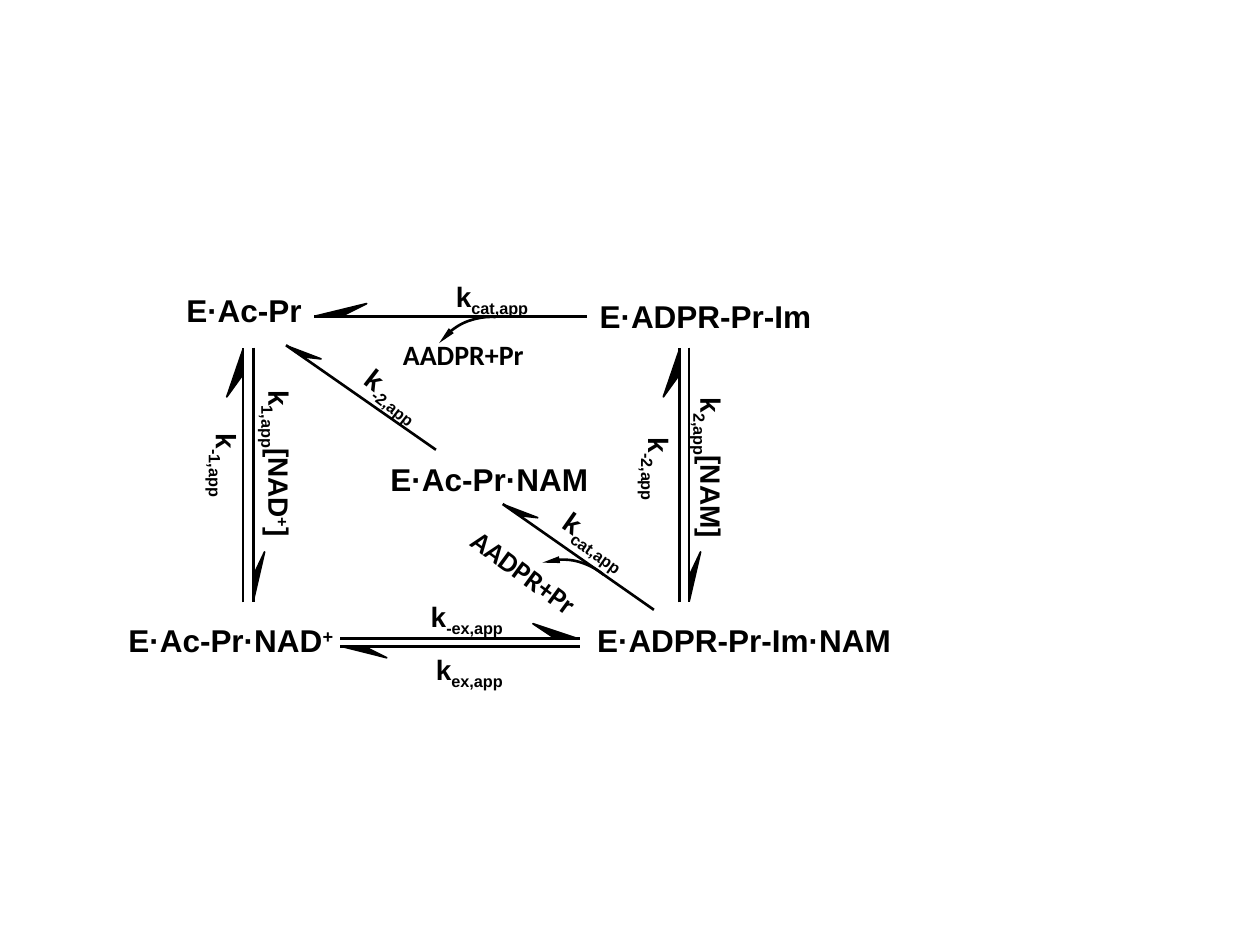
from math import hypot

from pptx import Presentation
from pptx.dml.color import RGBColor
from pptx.enum.shapes import MSO_CONNECTOR, MSO_SHAPE
from pptx.enum.text import MSO_AUTO_SIZE
from pptx.oxml.ns import qn
from pptx.util import Inches, Pt
from lxml.etree import SubElement

COLORS = {"ink": "000000"}
INK = RGBColor.from_string(COLORS["ink"])

deck = Presentation()
deck.slide_width, deck.slide_height = Inches(10), Inches(7.5)
slide = deck.slides.add_slide(deck.slide_layouts[6])
shapes = slide.shapes
CELL = deck.slide_width / 100  # grid of 100 columns by 75 rows


def grid(*cells):
    return [round(c * CELL) for c in cells]


def label(text, left, top, wide, size=16, font="Arial", turn=0):
    """Bold text; "|" parts runs, "_" lowers a run and "^" raises it."""
    high = 4 if size > 16 else 3.7
    box = shapes.add_textbox(*grid(left, top, wide, high))
    box.rotation = turn
    frame = box.text_frame
    frame.word_wrap = False
    frame.auto_size = MSO_AUTO_SIZE.SHAPE_TO_FIT_TEXT
    for part in text.split("|"):
        shift = {"_": "-25000", "^": "30000"}.get(part[0])
        run = frame.paragraphs[0].add_run()
        run.text = part[1:] if shift else part
        run.font.size, run.font.name, run.font.bold = Pt(size), font, True
        run.font.color.rgb = INK
        if shift:
            run.font._element.set("baseline", shift)
    return box


def arrow(start, end, near, far, off):
    """Line with a half head: near and far run back from the tip, off is sideways."""
    line = shapes.add_connector(MSO_CONNECTOR.STRAIGHT, *grid(*start, *end))
    line.line.color.rgb, line.line.width = INK, Pt(1.5)
    SubElement(line._element.spPr, qn("a:effectLst"))
    dx, dy = start[0] - end[0], start[1] - end[1]
    span = hypot(dx, dy)
    ux, uy = dx / span, dy / span
    tip = end[0] + 0.1 * ux, end[1] + 0.1 * uy
    inner = tip[0] + near * ux, tip[1] + near * uy
    outer = tip[0] + far * ux + off * uy, tip[1] + far * uy - off * ux
    path = shapes.build_freeform(*grid(*tip), scale=1.0)
    path.add_line_segments([grid(*inner), grid(*outer)], close=True)
    head = path.convert_to_shape()
    head.shadow.inherit = False
    head.fill.solid()
    head.fill.fore_color.rgb = INK
    head.line.color.rgb, head.line.width = INK, Pt(1)
    return line


def release(left, top, turn, text_at, tilt=0):
    """Curved arrow with the product that leaves."""
    arc = shapes.add_shape(MSO_SHAPE.ARC, *grid(left, top, 10.3, 10.4))
    arc.shadow.inherit = False
    arc.rotation = turn
    for i, angle in enumerate((290.35, 347.44)):
        arc.adjustments[i] = angle * 0.6  # degrees to shape units
    arc.fill.background()
    arc.line.color.rgb, arc.line.width = INK, Pt(1.5)
    end = SubElement(arc.line._get_or_add_ln(), qn("a:headEnd"))
    for key, value in (("type", "triangle"), ("w", "sm"), ("len", "lg")):
        end.set(key, value)
    label("AADPR+Pr", *text_at, 11.7, font="Calibri", turn=tilt)


def upright(left, top, wide, high, down, up):
    """Vertical equilibrium; each label is text, offset from the box, width."""
    right, foot = left + wide, top + high
    arrow((right, top), (right, foot), 2, 3.9, -0.9)
    arrow((left, foot), (left, top), 2, 3.8, -1.3)
    for text, dx, dy, size in (down, up):
        label(text, left + dx, top + dy, size, turn=90)


def level(left, top, wide, high):
    """Horizontal equilibrium with its two rate constants."""
    right, foot = left + wide, top + high
    arrow((right, foot), (left, foot), 1.8, 3.6, -0.9)
    arrow((left, top), (right, top), 1.8, 3.6, -1.2)
    label("k|_-ex,app", left + 6.2, top - 3.6, 8.5)
    label(" k|_ex,app", left + 6, foot, 9)


def slope(left, top, wide, high, text, dx, dy, size, turn):
    """Diagonal step from bottom right to top left."""
    arrow((left + wide, top + high), (left, top), 1.5, 2.8, 0.7)
    label(text, left + dx, top + dy, size, turn=turn)


def turnover(left, top, wide, source):
    """Top catalytic step, joined to its source species."""
    line = arrow((left + wide, top), (left, top), 2.1, 4.1, 1)
    line.begin_connect(source, 1)
    label("k|_cat,app", left + 10.3, top - 3.4, 8.5)
    release(left + 9, top, 285.9, (left + 6.1, top + 1.2))


# Enzyme species
label("E·Ac-Pr", 13.8, 22.6, 11.2, 18)
imidate = label("E·ADPR-Pr-Im", 46.6, 23.1, 18.9, 18)
label("E·Ac-Pr·NAM", 30, 36, 17.8, 18)
label("E·Ac-Pr·NAD|^+", 9.2, 48.8, 18.5, 18)
label("E·ADPR-Pr-Im·NAM", 46.4, 48.8, 25.5, 18)

# Binding equilibria on the left and right
upright(19.3, 27.6, 0.8, 20.2,
        ("k|_1,app|[NAD|^+|]", -4.5, 7.9, 14.7), ("k|_-1,app", -5.1, 7.8, 7.6))
upright(53.95, 27.6, 0.75, 20.2,
        ("k|_2,app|[NAM]", -4.55, 8.2, 14.1), ("k|_-2,app", -5.45, 8.1, 7.6))

# Exchange along the bottom, turnover along the top
level(27, 50.7, 19, 0.6)
turnover(24.9, 25.1, 21.7, imidate)

# Diagonal branch
slope(39.9, 40, 12, 8.4, "k|_cat,app", 3.5, 1.2, 8.5, 35)
slope(22.7, 27.4, 11.9, 8.3, "k|_-2,app", 5, 2.2, 7.6, 37.7)
release(39.5, 44.4, 321.8, (35.8, 43.6), 36.2)

deck.save("out.pptx")
